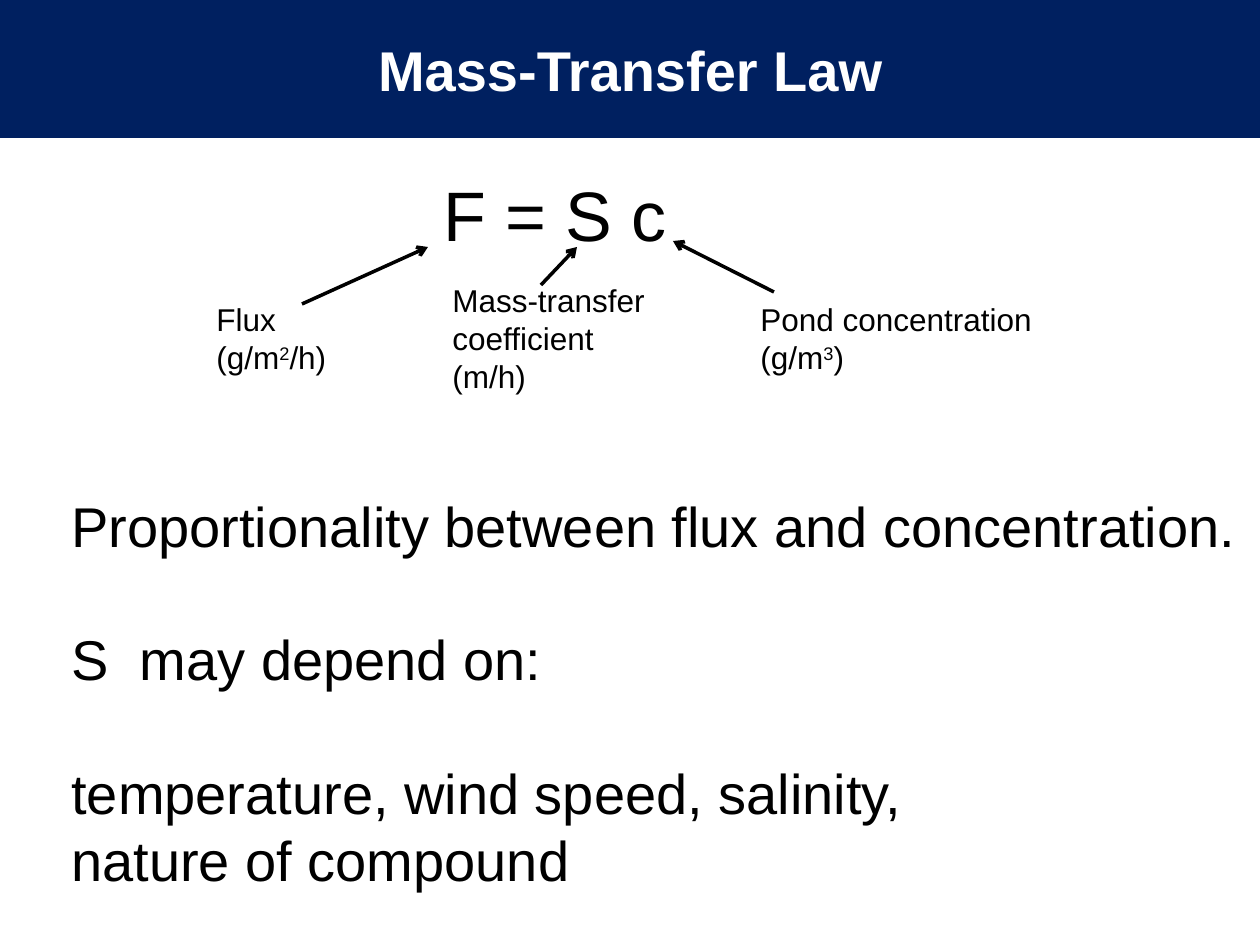
"""Build the Mass-Transfer Law slide."""
from dataclasses import dataclass

from lxml import etree
from pptx import Presentation
from pptx.dml.color import RGBColor
from pptx.enum.shapes import MSO_CONNECTOR
from pptx.enum.text import MSO_ANCHOR, MSO_AUTO_SIZE, PP_ALIGN
from pptx.oxml.ns import qn
from pptx.util import Pt

STRAIGHT = MSO_CONNECTOR.STRAIGHT
MIDDLE = MSO_ANCHOR.MIDDLE
GROW, FIXED = MSO_AUTO_SIZE.SHAPE_TO_FIT_TEXT, MSO_AUTO_SIZE.NONE
LEFT, CENTER = PP_ALIGN.LEFT, PP_ALIGN.CENTER
EMU_PER_PX = 914400 / 126
TITLE_ONLY = 5


@dataclass(frozen=True)
class Theme:
    font: str = "Arial"
    navy: RGBColor = RGBColor(0x00, 0x20, 0x60)
    white: RGBColor = RGBColor(0xFF, 0xFF, 0xFF)
    black: RGBColor = RGBColor(0x00, 0x00, 0x00)
    formula: int = 40
    large: int = 32
    label: int = 18
    line: int = 2
    gap: int = 38


def px(*lengths):
    return [round(length * EMU_PER_PX) for length in lengths]


def add_text(para, text, *, font, size, color, bold=False, baseline=None, spacing=None):
    span = para.add_run()
    span.text = text
    span.font.name, span.font.size, span.font.bold = font, Pt(size), bold
    span.font.color.rgb = color
    properties = span.font._element
    if baseline:
        properties.set("baseline", str(baseline))
    if spacing:
        properties.set("spc", str(spacing))


class SlideBuilder:
    def __init__(self, deck, theme):
        self.theme = theme
        self.slide = deck.slides.add_slide(deck.slide_layouts[TITLE_ONLY])

    def title(self, text, *place):
        theme, band = self.theme, self.slide.shapes.title
        band.left, band.top, band.width, band.height = px(*place)
        band.fill.solid()
        band.fill.fore_color.rgb = theme.navy
        frame = band.text_frame
        frame.auto_size, frame.vertical_anchor = FIXED, MIDDLE
        para = frame.paragraphs[0]
        para.alignment = CENTER
        add_text(para, text, font=theme.font, size=theme.large, color=theme.white, bold=True)

    def text(self, paragraphs, *place, size, wrap=False, gaps=()):
        """Write paragraphs of (text, format) spans; gaps lists those set apart from the one above."""
        theme = self.theme
        box = self.slide.shapes.add_textbox(*px(*place))
        frame = box.text_frame
        frame.word_wrap, frame.auto_size = wrap, GROW
        for index, spans in enumerate(paragraphs):
            para = frame.add_paragraph() if index else frame.paragraphs[0]
            para.alignment = LEFT
            if index in gaps:
                para.space_before = Pt(theme.gap)
            for text, style in spans:
                add_text(para, text, font=theme.font, size=size, color=theme.black, **style)

    def arrow(self, *ends):
        arrow = self.slide.shapes.add_connector(STRAIGHT, *px(*ends))
        arrow.line.color.rgb = self.theme.black
        arrow.line.width = Pt(self.theme.line)
        etree.SubElement(arrow.line._get_or_add_ln(), qn("a:tailEnd"), type="arrow")
        etree.SubElement(arrow._element.spPr, qn("a:effectLst"))


def plain(text):
    return [(text, {})]


def unit(before, power, after):
    return [(before, {}), (power, {"baseline": 30000}), (after, {})]


def main():
    theme = Theme()
    deck = Presentation()
    deck.slide_width, deck.slide_height = px(1260, 945)
    page = SlideBuilder(deck, theme)

    page.title("Mass-Transfer Law", 0, 0, 1261, 138)
    page.text([plain("F = S c")], 431, 165, 251, 97, size=theme.formula)

    flux = [plain("Flux"), unit("(g/m", "2", "/h)")]
    coefficient = [plain("Mass-transfer coefficient"), plain("(m/h)")]
    concentration = [plain("Pond concentration"), unit("(g/m", "3", ")")]
    page.text(flux, 204, 294, 139, 89, size=theme.label)
    page.text(coefficient, 440, 275, 290, 127, size=theme.label, wrap=True)
    page.text(concentration, 748, 294, 300, 89, size=theme.label)

    for ends in ((302, 304, 428, 247), (541, 285, 577, 247), (774, 292, 673, 241)):
        page.arrow(*ends)

    notes = [
        plain("Proportionality between flux and concentration."),
        [("S", {}), (" ", {"spacing": 890}), ("may depend on:", {})],
        plain("temperature, wind speed, salinity,"),
        plain("nature of compound"),
    ]
    page.text(notes, 59, 485, 1201, 420, size=theme.large, gaps=(1, 2))
    deck.save("out.pptx")


if __name__ == "__main__":
    main()
